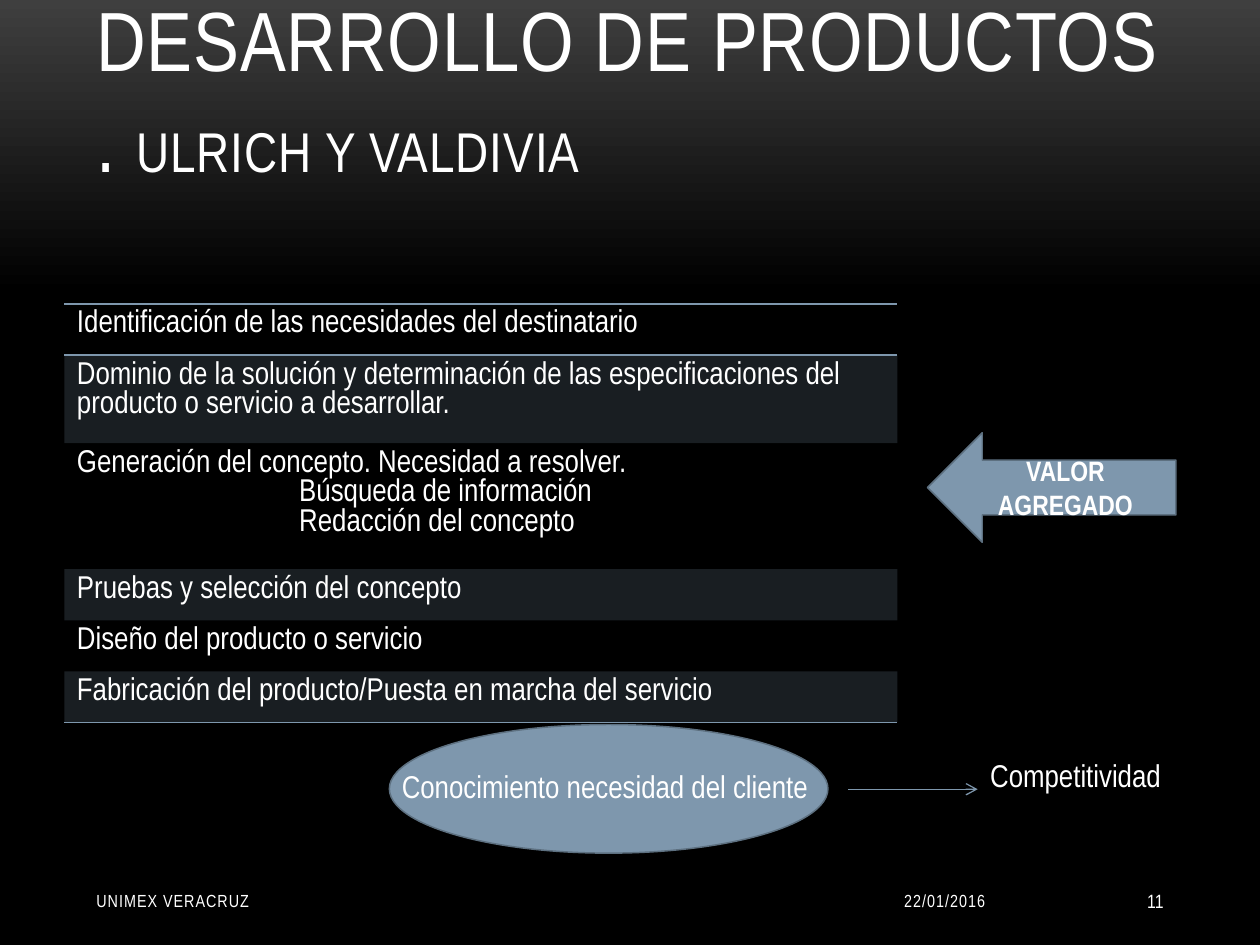
from copy import deepcopy
from dataclasses import dataclass

from pptx import Presentation
from pptx.dml.color import RGBColor
from pptx.enum.shapes import MSO_CONNECTOR, MSO_SHAPE
from pptx.enum.text import MSO_ANCHOR, PP_ALIGN
from pptx.oxml import parse_xml
from pptx.oxml.ns import nsdecls, qn
from pptx.util import Pt

LEFT, CENTER, RIGHT = PP_ALIGN.LEFT, PP_ALIGN.CENTER, PP_ALIGN.RIGHT
TOP, MIDDLE, BOTTOM = MSO_ANCHOR.TOP, MSO_ANCHOR.MIDDLE, MSO_ANCHOR.BOTTOM
OVAL, LEFT_ARROW = MSO_SHAPE.OVAL, MSO_SHAPE.LEFT_ARROW
STRAIGHT = MSO_CONNECTOR.STRAIGHT
FONT = "Arial Narrow"
COLORS = {
    "text": "FFFFFF",
    "accent": "7E97AD",
    "outline": "5D7080",
    "bg_top": "3F3F3F",
    "bg": "000000",
}
NO_STYLE_NO_GRID = "{2D5ABB26-0587-4C30-8999-92F81FD0307C}"


@dataclass
class Run:
    text: str
    size: float
    spacing: float = 0
    bold: bool = False


@dataclass
class Label:
    left: float
    top: float
    width: float
    height: float
    runs: list[Run]
    align: PP_ALIGN = LEFT
    anchor: MSO_ANCHOR = TOP


@dataclass
class Step:
    text: str
    details: tuple[str, ...] = ()
    borders: tuple[str, ...] = ()


LABELS = [
    Label(48, 21.6, 624, 90,
          [Run("DESARROLLO DE PRODUCTOS . ", 48, 0.5),
           Run("ULRICH Y VALDIVIA", 32, 0.5)], anchor=BOTTOM),
    Label(450, 500.4, 120, 28.8, [Run("22/01/2016", 10, 0.6)], RIGHT, MIDDLE),
    Label(48, 500.4, 228, 28.8, [Run("UNIMEX VERACRUZ", 10, 0.6)], anchor=MIDDLE),
    Label(594, 500.4, 78, 28.8, [Run("11", 11)], RIGHT, MIDDLE),
    Label(222.5, 434.9, 300, 28.8, [Run("Conocimiento necesidad del cliente", 18)]),
    Label(558.7, 428.4, 142, 28.8, [Run("Competitividad", 18)]),
]
STEPS = [
    Step("Identificación de las necesidades del destinatario", borders=("lnT", "lnB")),
    Step("Dominio de la solución y determinación de las especificaciones del "
         "producto o servicio a desarrollar."),
    Step("Generación del concepto. Necesidad a resolver.",
         ("Búsqueda de información", "Redacción del concepto")),
    Step("Pruebas y selección del concepto"),
    Step("Diseño del producto o servicio"),
    Step("Fabricación del producto/Puesta en marcha del servicio", borders=("lnB",)),
]
ROW_HEIGHT = 29.2
DETAIL_INDENT = 127


def rgb(name: str) -> RGBColor:
    return RGBColor.from_string(COLORS[name])


def add_run(p, run: Run) -> None:
    r = p.add_run()
    r.text = run.text
    r.font.name, r.font.size, r.font.bold = FONT, Pt(run.size), run.bold
    r.font.color.rgb = rgb("text")
    if run.spacing:
        r.font._element.set("spc", str(round(run.spacing * 100)))


def add_label(s, label: Label) -> None:
    box = s.shapes.add_textbox(Pt(label.left), Pt(label.top),
                               Pt(label.width), Pt(label.height))
    tf = box.text_frame
    tf.word_wrap = True
    tf.vertical_anchor = label.anchor
    p = tf.paragraphs[0]
    p.alignment = label.align
    for run in label.runs:
        add_run(p, run)


def add_filled_shape(s, kind: MSO_SHAPE, left: float, top: float,
                     width: float, height: float):
    sp = s.shapes.add_shape(kind, Pt(left), Pt(top), Pt(width), Pt(height))
    sp.shadow.inherit = False
    sp.fill.solid()
    sp.fill.fore_color.rgb = rgb("accent")
    sp.line.color.rgb = rgb("outline")
    sp.line.width = Pt(0.85)
    return sp


def set_background(s) -> None:
    fill = s.background.fill
    fill.gradient()
    fill.gradient_angle = 270
    for stop, name, position in zip(fill.gradient_stops, ("bg_top", "bg"), (0, 0.31)):
        stop.color.rgb = rgb(name)
        stop.position = position
    stops = s._element.find(".//" + qn("a:gsLst"))
    last = deepcopy(stops[-1])
    last.set("pos", "100000")
    stops.append(last)


def fill_cell(cell, step: Step, shaded: bool) -> None:
    tf = cell.text_frame
    add_run(tf.paragraphs[0], Run(step.text, 18))
    for detail in step.details:
        p = tf.add_paragraph()
        p._p.get_or_add_pPr().set("marL", str(Pt(DETAIL_INDENT)))
        add_run(p, Run(detail, 18))
    tc_pr = cell._tc.get_or_add_tcPr()
    if shaded:
        cell.fill.solid()
        cell.fill.fore_color.rgb = rgb("accent")
        color = tc_pr.find(".//" + qn("a:srgbClr"))
        color.append(parse_xml(f'<a:alpha {nsdecls("a")} val="20000"/>'))
    else:
        cell.fill.background()
    for i, side in enumerate(step.borders):
        tc_pr.insert(i, parse_xml(
            f'<a:{side} {nsdecls("a")} w="{Pt(1)}"><a:solidFill>'
            f'<a:srgbClr val="{COLORS["accent"]}"/></a:solidFill></a:{side}>'))


def add_steps_table(s) -> None:
    frame = s.shapes.add_table(len(STEPS), 1, Pt(36.8), Pt(173.6),
                               Pt(476), Pt(ROW_HEIGHT * len(STEPS)))
    table = frame.table
    table.first_row = table.horz_banding = False
    frame._element.find(".//" + qn("a:tableStyleId")).text = NO_STYLE_NO_GRID
    for i, step in enumerate(STEPS):
        table.rows[i].height = Pt(ROW_HEIGHT)
        fill_cell(table.cell(i, 0), step, shaded=i % 2 == 1)


def add_arrow_line(s, x1: float, x2: float, y: float) -> None:
    line = s.shapes.add_connector(STRAIGHT, Pt(x1), Pt(y), Pt(x2), Pt(y))
    line.line.color.rgb = rgb("accent")
    line.line.width = Pt(0.75)
    line.line._get_or_add_ln().append(
        parse_xml(f'<a:tailEnd {nsdecls("a")} type="arrow"/>'))
    line._element.spPr.append(parse_xml(f'<a:effectLst {nsdecls("a")}/>'))


def main() -> None:
    prs = Presentation()
    prs.slide_width, prs.slide_height = Pt(720), Pt(540)
    s = prs.slides.add_slide(prs.slide_layouts[6])
    set_background(s)

    # Customer knowledge ellipse, behind its label
    add_filled_shape(s, OVAL, 222.5, 414, 250.6, 73.5)

    # Title, footer and labels
    for label in LABELS:
        add_label(s, label)

    # Development steps
    add_steps_table(s)

    # Added value arrow
    sp = add_filled_shape(s, LEFT_ARROW, 530, 247.3, 142, 62.6)
    sp.text_frame.vertical_anchor = MIDDLE
    p = sp.text_frame.paragraphs[0]
    p.alignment = CENTER
    add_run(p, Run("VALOR AGREGADO", 16, bold=True))

    # From customer knowledge to competitiveness
    add_arrow_line(s, 484.6, 558.7, 451)

    prs.save("out.pptx")


if __name__ == "__main__":
    main()
